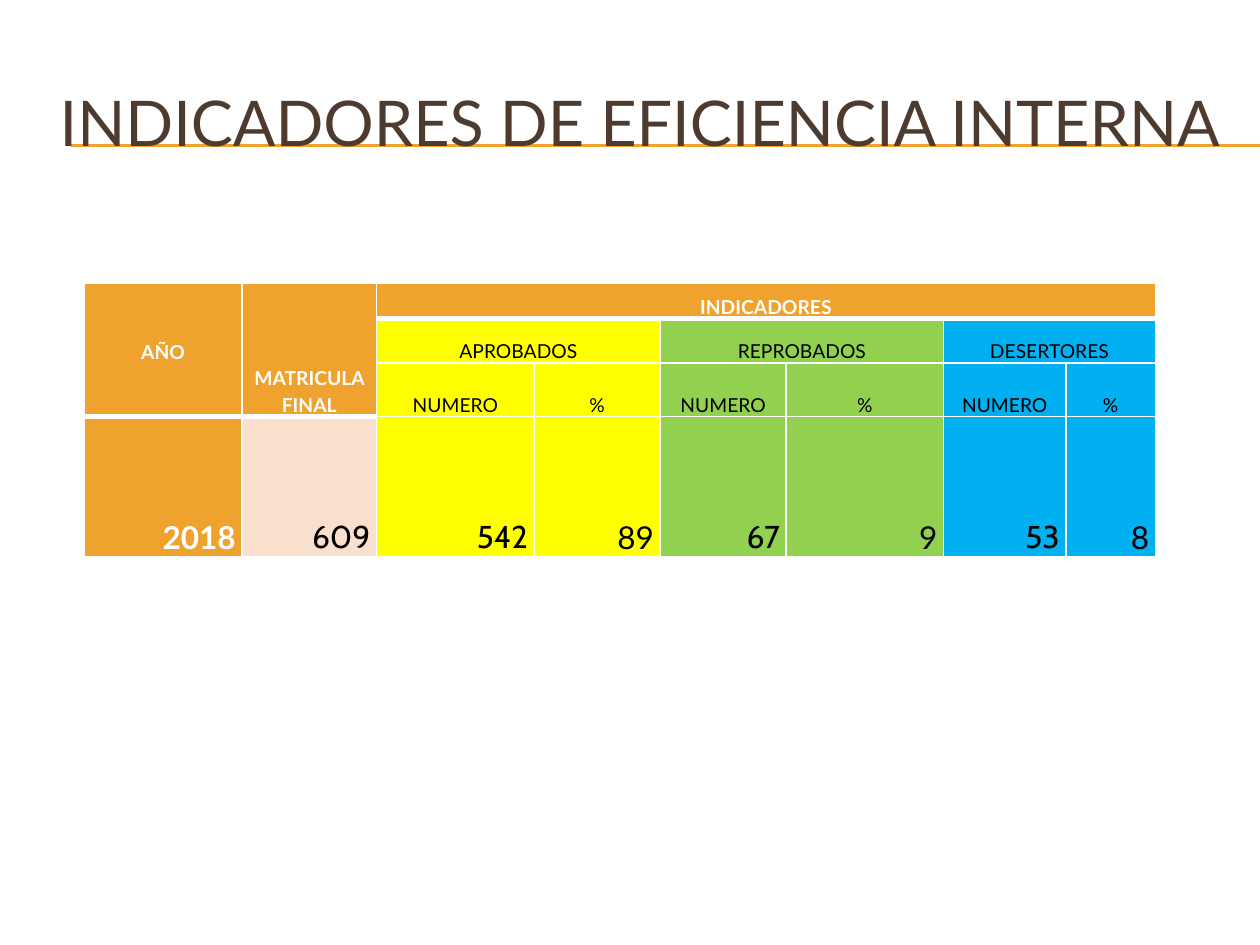
from lxml import etree
from pptx import Presentation
from pptx.dml.color import RGBColor
from pptx.enum.shapes import MSO_CONNECTOR
from pptx.enum.text import MSO_ANCHOR, PP_ALIGN
from pptx.oxml.ns import qn
from pptx.util import Inches, Pt

STRAIGHT = MSO_CONNECTOR.STRAIGHT
MIDDLE, BOTTOM = MSO_ANCHOR.MIDDLE, MSO_ANCHOR.BOTTOM
CENTER, RIGHT = PP_ALIGN.CENTER, PP_ALIGN.RIGHT

ORANGE = RGBColor(0xF0, 0xA2, 0x2E)
BROWN = RGBColor(0x4E, 0x3B, 0x30)
PEACH = RGBColor(0xF9, 0xE0, 0xCD)
YELLOW = RGBColor(0xFF, 0xFF, 0x00)
GREEN = RGBColor(0x92, 0xD0, 0x50)
BLUE = RGBColor(0x00, 0xB0, 0xF0)
WHITE = RGBColor(0xFF, 0xFF, 0xFF)
BLACK = RGBColor(0, 0, 0)


def write(frame, text, align, size, color, bold=False, name="Lato"):
    para = frame.paragraphs[0]
    para.alignment = align
    run = para.add_run()
    run.text = text
    run.font.color.rgb = color
    look = {"size": Pt(size), "bold": bold, "name": name}
    for key, value in look.items():
        setattr(run.font, key, value)
    return para


def edge(cell, side, width):
    line = etree.SubElement(cell._tc.get_or_add_tcPr(), qn("a:ln" + side), w=str(Pt(width)))
    fill = etree.SubElement(line, qn("a:solidFill"))
    etree.SubElement(fill, qn("a:srgbClr"), val=str(WHITE))


prs = Presentation()
prs.slide_width, prs.slide_height = Inches(10), Inches(7.5)
slide = prs.slides.add_slide(prs.slide_layouts[5])

# Title over a double rule
title = slide.shapes.title
place = {"left": 0.33, "top": 0.5, "width": 9.5, "height": 0.92}
for key, value in place.items():
    setattr(title, key, Inches(value))
frame = title.text_frame
frame.word_wrap = True
frame.vertical_anchor = MIDDLE
frame.margin_left = frame.margin_right = 0
write(frame, "INDICADORES DE EFICIENCIA INTERNA", CENTER, 36, BROWN)

for y in (1.15, 1.16):
    rule = slide.shapes.add_connector(STRAIGHT, Inches(0.56), Inches(y), prs.slide_width, Inches(y))
    rule.line.color.rgb = ORANGE
    rule.line.width = Pt(0.75)
    etree.SubElement(rule._element.spPr, qn("a:effectLst"))
    title._element.addprevious(rule._element)

# Table grid
cols = [1.25, 1.07, 1.25, 1, 1, 1.25, 0.97, 0.71]
rows = [0.28, 0.35, 0.42, 1.11]
table = slide.shapes.add_table(
    len(rows), len(cols), Inches(0.67), Inches(2.25), Inches(sum(cols)), Inches(sum(rows))
).table
for col, width in zip(table.columns, cols):
    col.width = Inches(width)
for row, height in zip(table.rows, rows):
    row.height = Inches(height)

tints = [ORANGE, PEACH, YELLOW, YELLOW, GREEN, GREEN, BLUE, BLUE]
for r in range(len(rows)):
    for c in range(len(cols)):
        cell = table.cell(r, c)
        label = c < 2
        above = r == 3 if label else r == 1
        below = r in (0, 2) if label else r == 0
        for side, thick in zip("LRTB", (False, False, above, below)):
            edge(cell, side, 3 if thick else 1)
        head = r == 0 or (label and r < 3)
        cell.fill.solid()
        cell.fill.fore_color.rgb = ORANGE if head else tints[c]
        cell.vertical_anchor = MIDDLE if (r, c) == (0, 0) else BOTTOM
        cell.margin_left = cell.margin_right = Inches(0.05)
        cell.margin_top = cell.margin_bottom = 0

spans = [(0, 0, 2, 0), (0, 1, 2, 1), (0, 2, 0, 7)]
spans += [(1, c, 1, c + 1) for c in (2, 4, 6)]
for top, left, bottom, right in spans:
    table.cell(top, left).merge(table.cell(bottom, right))

# Headings and figures
heads = {(0, 0): "AÑO", (0, 1): "MATRICULA FINAL", (0, 2): "INDICADORES"}
for i, group in enumerate(["APROBADOS", "REPROBADOS", "DESERTORES"]):
    c = 2 + 2 * i
    heads.update({(1, c): group, (2, c): "NUMERO", (2, c + 1): "%"})
for (r, c), text in heads.items():
    main = r == 0
    para = write(table.cell(r, c).text_frame, text, CENTER, 11, WHITE if main else BLACK, main)
    para.line_spacing = 1.15

values = ["2018", "609", "542", "89", "67", "9", "53", "8"]
for c, text in enumerate(values):
    year = c == 0
    name = "Cabin" if c in (1, 2, 4, 6) else "Lato"
    para = write(table.cell(3, c).text_frame, text, RIGHT, 18, WHITE if year else BLACK, year, name)
    para.line_spacing = 1.15

prs.save("out.pptx")
